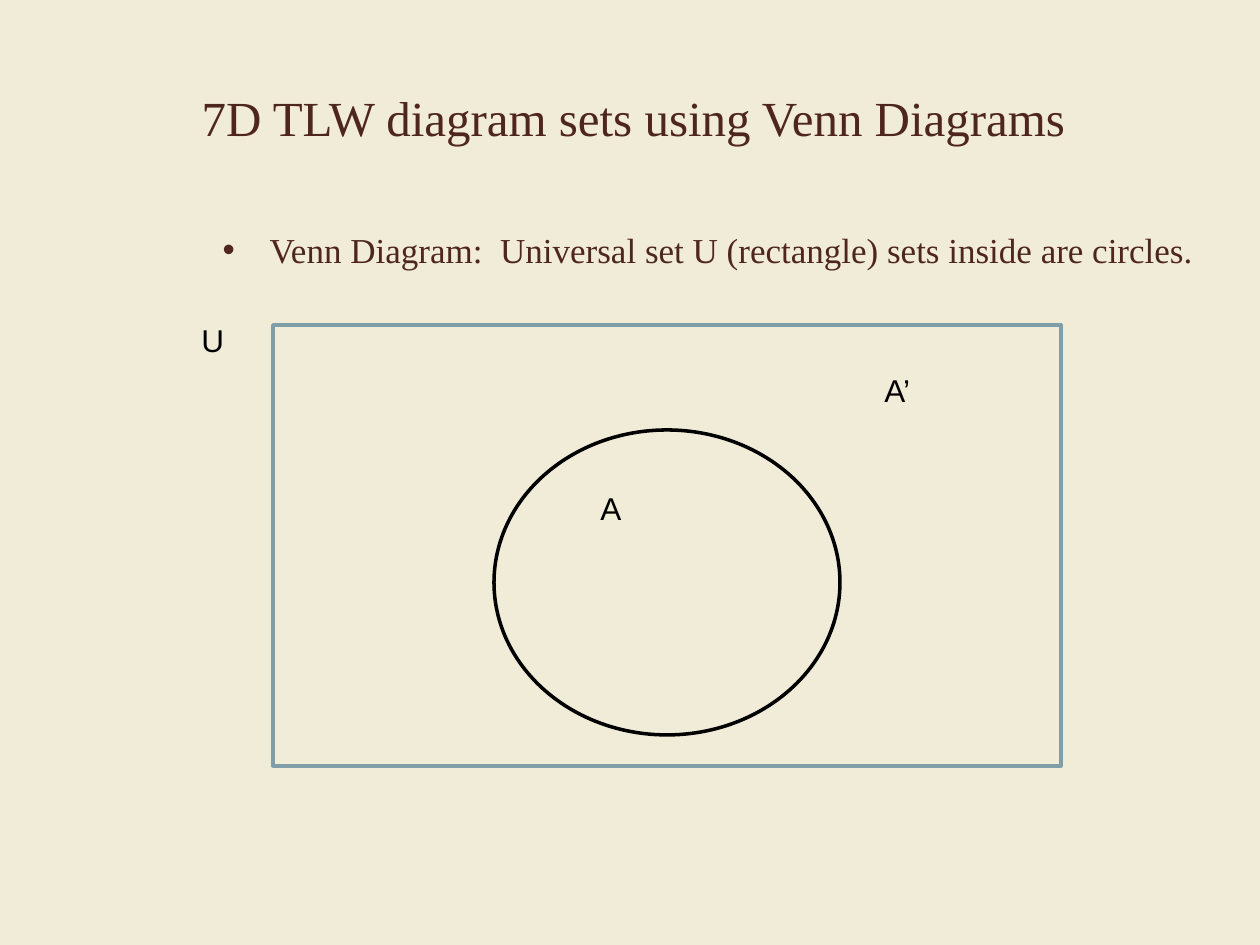
import pptx
import pptx.dml.color
import pptx.enum.shapes
import pptx.enum.text
import pptx.util
from lxml import etree

PX = 914400 // 126
SHAPES = pptx.enum.shapes.MSO_SHAPE
ANCHORS = pptx.enum.text.MSO_ANCHOR
COLORS = {"background": "F1ECD8", "text": "4F261E", "universe": "809EA8", "black": "000000"}

TITLE = "7D TLW diagram sets using Venn Diagrams"
DEFINITION = "Venn Diagram:  Universal set U (rectangle) sets inside are circles."
TITLE_BOX = (189, 38, 1008, 157)
BODY_BOX = (210, 222, 999, 624)

# preset, box (left, top, width, height), line colour
SETS = [
    (SHAPES.RECTANGLE, (273, 325, 788, 441), "universe"),
    (SHAPES.OVAL, (494, 430, 346, 305), "black"),
]
LABELS = [
    ("U", (189, 315, 84, 50)),
    ("A", (588, 483, 136, 50)),
    ("A’", (872, 365, 105, 50)),
]


def rgb(name):
    return pptx.dml.color.RGBColor.from_string(COLORS[name])


def emu(box):
    return [pptx.util.Emu(length * PX) for length in box]


def place(shape, box):
    shape.left, shape.top, shape.width, shape.height = emu(box)


def write(shape, text, size, font="Times New Roman", color="text", anchor=ANCHORS.TOP, bullet=None):
    """Fill a shape with one left-aligned paragraph, with a hanging bullet if given."""
    frame = shape.text_frame
    frame.word_wrap = True
    frame.auto_size = pptx.enum.text.MSO_AUTO_SIZE.NONE
    frame.vertical_anchor = anchor
    frame.text = text
    paragraph = frame.paragraphs[0]
    paragraph.alignment = pptx.enum.text.PP_ALIGN.LEFT
    paragraph.space_before = pptx.util.Pt(0)
    if bullet:
        indent = 47 * PX
        properties = paragraph._p.get_or_add_pPr()
        properties.set("marL", str(indent))
        properties.set("indent", str(-indent))
        mark = etree.SubElement(properties, pptx.oxml.ns.qn("a:buChar"))
        mark.set("char", bullet)
    paragraph.font.size = pptx.util.Pt(size)
    paragraph.font.name = font
    paragraph.font.color.rgb = rgb(color)


def add_set(slide, preset, box, line):
    shape = slide.shapes.add_shape(preset, *emu(box))
    shape.shadow.inherit = False
    shape.fill.solid()
    shape.fill.fore_color.rgb = rgb("background")
    shape.line.color.rgb = rgb(line)
    shape.line.width = pptx.util.Pt(2)


def main():
    presentation = pptx.Presentation()
    presentation.slide_width = pptx.util.Inches(10)
    presentation.slide_height = pptx.util.Inches(7.5)
    slide = presentation.slides.add_slide(presentation.slide_layouts[1])
    slide.background.fill.solid()
    slide.background.fill.fore_color.rgb = rgb("background")

    title, body = slide.placeholders
    place(title, TITLE_BOX)
    write(title, TITLE, size=28, anchor=ANCHORS.MIDDLE)
    place(body, BODY_BOX)
    write(body, DEFINITION, size=20, bullet="•")

    for preset, box, line in SETS:
        add_set(slide, preset, box, line)
    for text, box in LABELS:
        write(slide.shapes.add_textbox(*emu(box)), text, size=18, font="Arial", color="black")

    presentation.save("out.pptx")


if __name__ == "__main__":
    main()
